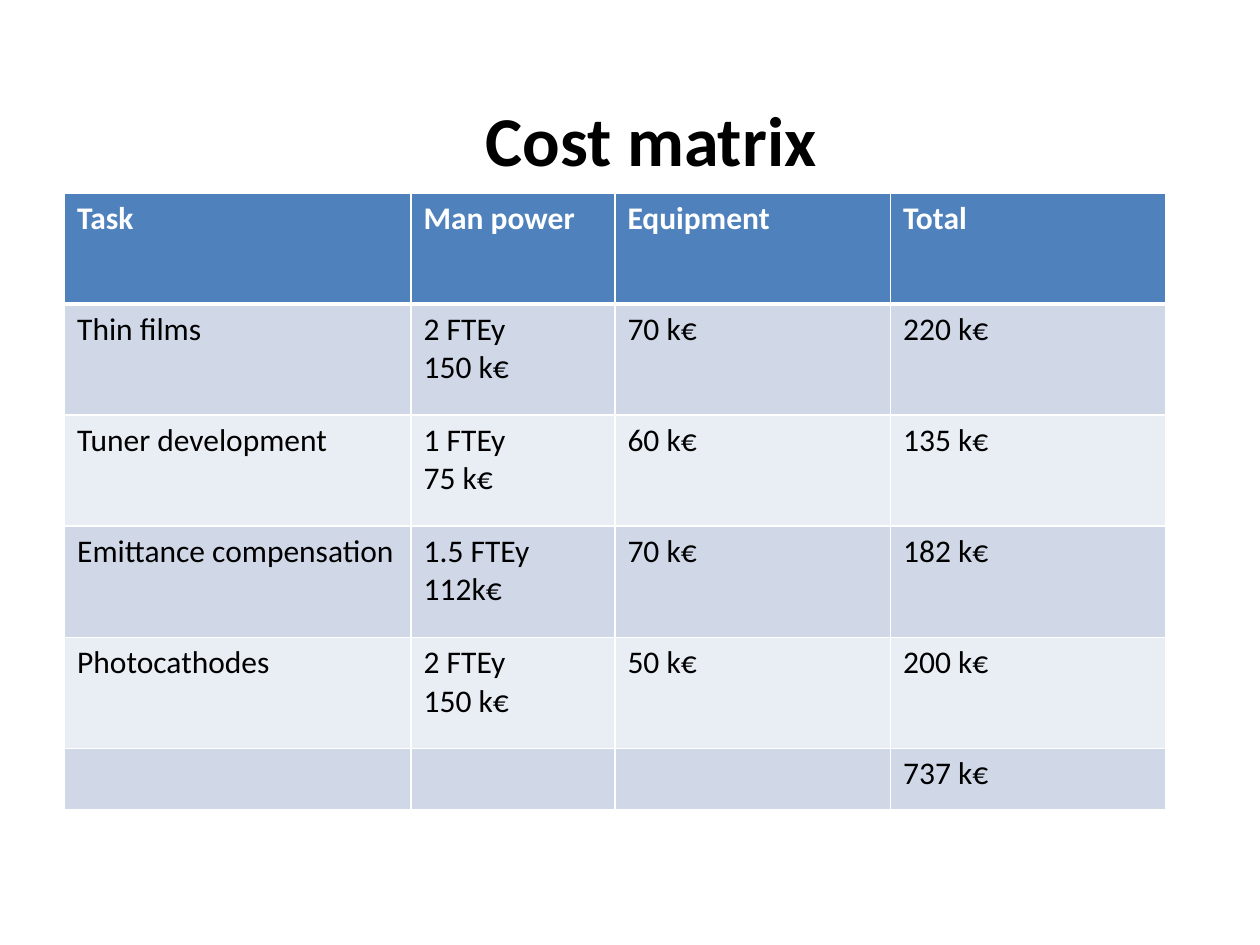
from lxml import etree
from pptx import Presentation
from pptx.dml.color import RGBColor
from pptx.enum.text import MSO_ANCHOR, PP_ALIGN
from pptx.oxml.ns import qn
from pptx.util import Pt

MIDDLE = MSO_ANCHOR.MIDDLE
CENTER = PP_ALIGN.CENTER

TITLE = "Cost matrix"
COSTS = [
    ("Task", "Man power", "Equipment", "Total"),
    ("Thin films", "2 FTEy\n150 k€", "70 k€", "220 k€"),
    ("Tuner development", "1 FTEy\n75 k€", "60 k€", "135 k€"),
    ("Emittance compensation", "1.5 FTEy\n112k€", "70 k€", "182 k€"),
    ("Photocathodes", "2 FTEy\n150 k€", "50 k€", "200 k€"),
    ("", "", "", "737 k€"),
]

FONT = "Calibri"
BLACK = RGBColor(0x00, 0x00, 0x00)
WHITE = RGBColor(0xFF, 0xFF, 0xFF)
HEADER_BLUE = RGBColor(0x4F, 0x81, 0xBD)
BAND_DARK = RGBColor(0xD0, 0xD8, 0xE8)
BAND_LIGHT = RGBColor(0xE9, 0xED, 0xF4)

TABLE_LEFT, TABLE_TOP = 36.9, 110.2
COLUMN_WIDTHS = [198, 116.5, 157.5, 157.5]
ROW_HEIGHT, TOTAL_ROW_HEIGHT = 63.5, 35.3
ROW_HEIGHTS = [ROW_HEIGHT] * (len(COSTS) - 1) + [TOTAL_ROW_HEIGHT]


def style_text(text_frame, size, color, bold):
    for paragraph in text_frame.paragraphs:
        font = paragraph.font
        font.name, font.size, font.bold = FONT, Pt(size), bold
        font.color.rgb = color
        for run in paragraph.runs:
            run.font.name, run.font.size, run.font.bold = FONT, Pt(size), bold
            run.font.color.rgb = color


def set_borders(cell, color, widths):
    """Draw the cell's borders; widths maps each side (L, R, T, B) to points."""
    properties = cell._tc.get_or_add_tcPr()
    for side, width in widths.items():
        line = etree.SubElement(properties, qn(f"a:ln{side}"), w=str(Pt(width)))
        fill = etree.SubElement(line, qn("a:solidFill"))
        etree.SubElement(fill, qn("a:srgbClr"), val=str(color))


def add_title(slide):
    box = slide.shapes.add_textbox(Pt(48), Pt(34), Pt(648), Pt(90))
    text_frame = box.text_frame
    text_frame.word_wrap = True
    text_frame.vertical_anchor = MIDDLE
    text_frame.text = TITLE
    text_frame.paragraphs[0].alignment = CENTER
    style_text(text_frame, 40, BLACK, True)


def add_cost_table(slide):
    table = slide.shapes.add_table(
        len(COSTS), len(COLUMN_WIDTHS), Pt(TABLE_LEFT), Pt(TABLE_TOP),
        Pt(sum(COLUMN_WIDTHS)), Pt(sum(ROW_HEIGHTS))).table
    for column, width in zip(table.columns, COLUMN_WIDTHS):
        column.width = Pt(width)
    for index, (row, height) in enumerate(zip(table.rows, ROW_HEIGHTS)):
        row.height = Pt(height)
        is_header = index == 0
        band = BAND_DARK if index % 2 else BAND_LIGHT
        borders = {"L": 1, "R": 1, "T": 3 if index == 1 else 1,
                   "B": 3 if is_header else 1}
        for cell, text in zip(row.cells, COSTS[index]):
            cell.text_frame.text = text
            style_text(cell.text_frame, 18, WHITE if is_header else BLACK, is_header)
            set_borders(cell, WHITE, borders)
            cell.fill.solid()
            cell.fill.fore_color.rgb = HEADER_BLUE if is_header else band


def main():
    presentation = Presentation()
    presentation.slide_width, presentation.slide_height = Pt(720), Pt(540)
    slide = presentation.slides.add_slide(presentation.slide_layouts[6])
    add_title(slide)
    add_cost_table(slide)
    presentation.save("out.pptx")


if __name__ == "__main__":
    main()
